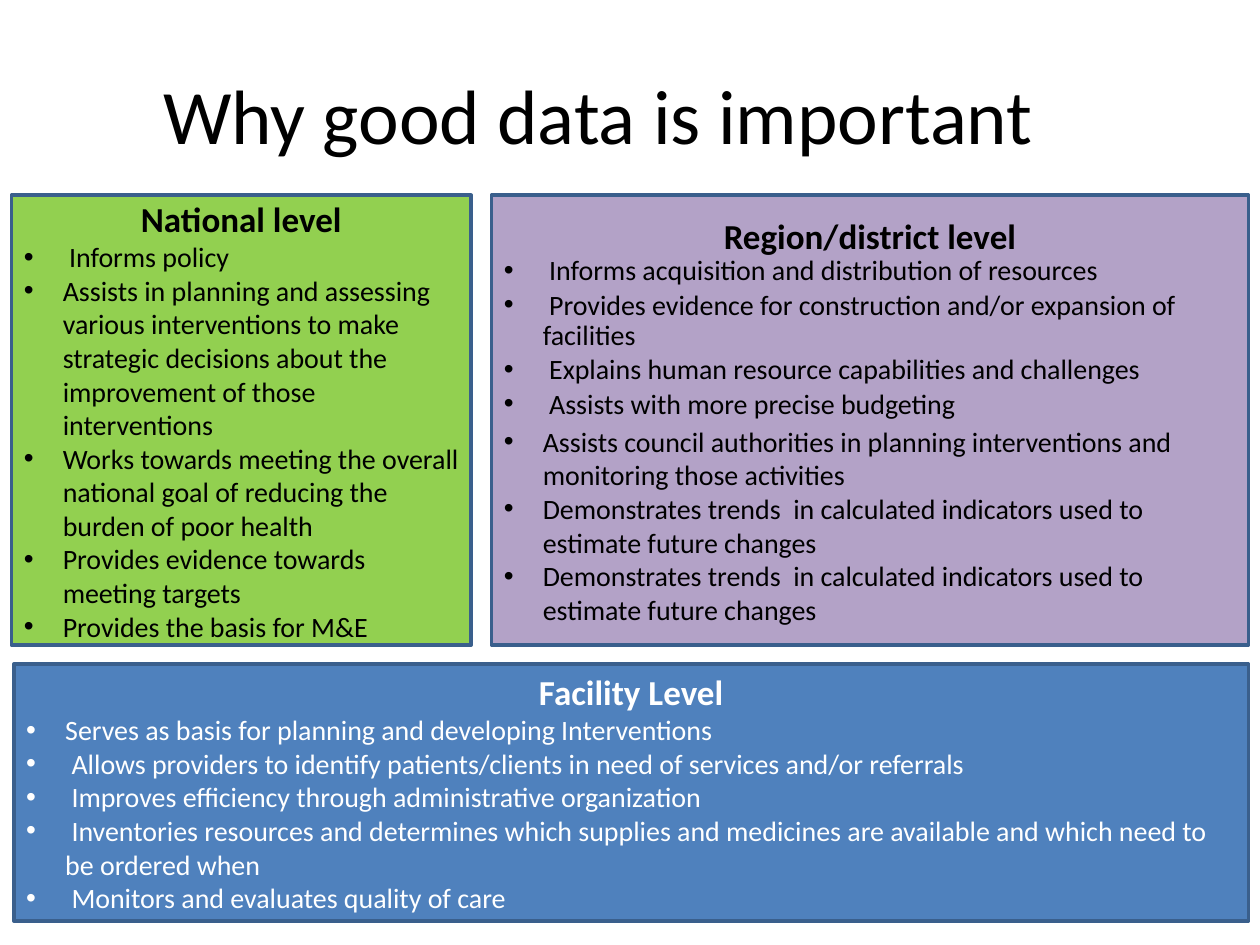
"""Build a slide on why good data matters at national, regional and facility level."""
from lxml.etree import SubElement
from pptx import Presentation
from pptx.dml.color import RGBColor as RGB
from pptx.enum.shapes import MSO_SHAPE as Shape
from pptx.enum.text import MSO_ANCHOR as Anchor, PP_ALIGN as Align
from pptx.oxml.ns import qn
from pptx.util import Inches, Pt

COLORS = {
    "black": "000000", "white": "FFFFFF", "border": "3A5F8C",
    "blue": "4F81BD", "purple": "B3A2C7", "green": "92D050",
}
TITLE = "Why good data is important"
LEVELS = [
    {
        "heading": "Facility Level", "box": (0.11, 5.27, 9.8, 2.04),
        "fill": "blue", "ink": "white", "tight": 0,
        "reasons": [
            "Serves as basis for planning and developing Interventions",
            " Allows providers to identify patients/clients in need of services and/or referrals",
            " Improves efficiency through administrative organization",
            " Inventories resources and determines which supplies and medicines are available "
            "and which need to be ordered when",
            " Monitors and evaluates quality of care",
        ],
    },
    {
        "heading": "Region/district level", "box": (3.9, 1.55, 6.01, 3.57),
        "fill": "purple", "ink": "black", "tight": 4,
        "reasons": [
            " Informs acquisition and distribution of resources",
            " Provides evidence for construction and/or expansion of facilities",
            " Explains human resource capabilities and challenges",
            " Assists with more precise budgeting",
            "Assists council authorities in planning interventions and monitoring those activities",
            "Demonstrates trends  in calculated indicators used to estimate future changes",
            "Demonstrates trends  in calculated indicators used to estimate future changes",
        ],
    },
    {
        "heading": "National level", "box": (0.09, 1.55, 3.65, 3.57),
        "fill": "green", "ink": "black", "tight": 0,
        "reasons": [
            " Informs policy",
            "Assists in planning and assessing various interventions to make strategic "
            "decisions about the improvement of those interventions",
            "Works towards meeting the overall national goal of reducing the burden of poor health",
            "Provides evidence towards meeting targets",
            "Provides the basis for M&E",
        ],
    },
]


def write(paragraph, text, size, ink, bold=False, bullet=False, tight=False):
    run = paragraph.add_run()
    run.text = text
    run.font.name = "Calibri"
    run.font.size = Pt(size)
    run.font.bold = bold
    run.font.color.rgb = RGB.from_string(COLORS[ink])
    paragraph.alignment = Align.LEFT if bullet else Align.CENTER
    if tight:
        paragraph.line_spacing = 0.9
        paragraph.space_after = Pt(2.4)
    if bullet:
        props = paragraph._p.get_or_add_pPr()
        props.set("marL", str(Inches(0.31)))
        props.set("indent", str(-Inches(0.31)))
        SubElement(props, qn("a:buFont"), typeface="Arial")
        SubElement(props, qn("a:buChar"), char="•")


def add_level(slide, level):
    panel = slide.shapes.add_shape(Shape.RECTANGLE, *map(Inches, level["box"]))
    panel.shadow.inherit = False
    panel.fill.solid()
    panel.fill.fore_color.rgb = RGB.from_string(COLORS[level["fill"]])
    panel.line.color.rgb = RGB.from_string(COLORS["border"])
    panel.line.width = Pt(2)
    frame = panel.text_frame
    frame.word_wrap = True
    frame.vertical_anchor = Anchor.MIDDLE
    write(frame.paragraphs[0], level["heading"], 20, level["ink"], bold=True)
    for index, reason in enumerate(level["reasons"]):
        write(frame.add_paragraph(), reason, 16, level["ink"],
              bullet=True, tight=index < level["tight"])


def main():
    deck = Presentation()
    deck.slide_width, deck.slide_height = Inches(10), Inches(7.5)
    slide = deck.slides.add_slide(deck.slide_layouts[6])
    title = slide.shapes.add_textbox(*map(Inches, (0.25, 0.28, 9, 1.25))).text_frame
    title.word_wrap = True
    title.vertical_anchor = Anchor.MIDDLE
    write(title.paragraphs[0], TITLE, 44, "black")
    for level in LEVELS:
        add_level(slide, level)
    deck.save("out.pptx")


if __name__ == "__main__":
    main()
